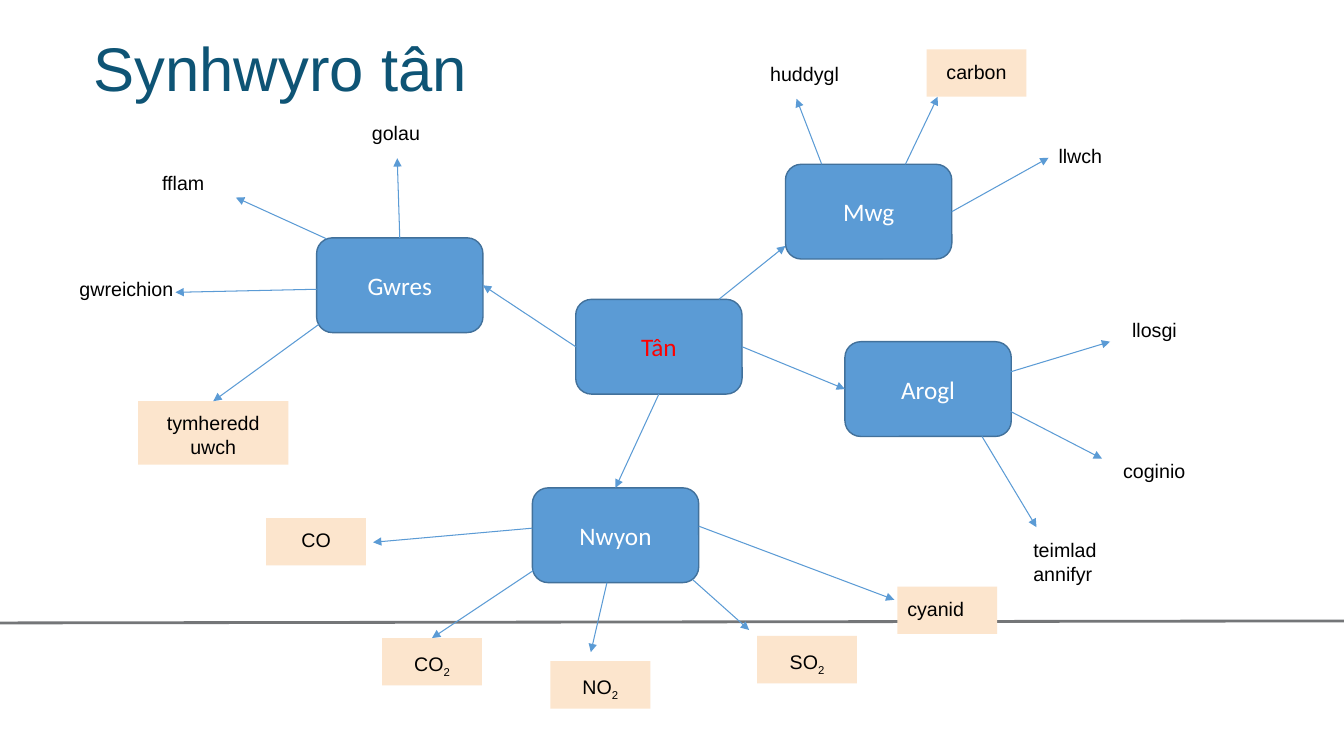
from lxml import etree
from pptx import Presentation
from pptx.dml.color import RGBColor
from pptx.enum.shapes import MSO_CONNECTOR, MSO_SHAPE
from pptx.enum.text import MSO_ANCHOR, PP_ALIGN
from pptx.oxml.ns import qn
from pptx.util import Inches, Pt

STRAIGHT = MSO_CONNECTOR.STRAIGHT
RECT, ROUND = MSO_SHAPE.RECTANGLE, MSO_SHAPE.ROUNDED_RECTANGLE
TOP_ANCHOR, MIDDLE = MSO_ANCHOR.TOP, MSO_ANCHOR.MIDDLE
LEFT_ALIGN, CENTER = PP_ALIGN.LEFT, PP_ALIGN.CENTER
TOP, LEFT, BOTTOM, RIGHT = range(4)

TEAL = RGBColor(0x0E, 0x54, 0x75)
BLUE = RGBColor(0x5B, 0x9B, 0xD5)
NAVY = RGBColor(0x42, 0x71, 0x9B)
PEACH = RGBColor(0xFC, 0xE5, 0xCD)
GREY = RGBColor(0x74, 0x76, 0x78)
RED = RGBColor(0xFF, 0, 0)
BLACK = RGBColor(0, 0, 0)
WHITE = RGBColor(0xFF, 0xFF, 0xFF)

TITLE = "Synhwyro tân"
HUB_SIZE = (1.65, 0.94)
LABEL_SIZE = (0.99, 0.47)

# name: left, top, text colour
HUBS = {
    "Tân": (5.71, 2.97, RED),
    "Arogl": (8.38, 3.39, WHITE),
    "Mwg": (7.79, 1.63, WHITE),
    "Gwres": (3.14, 2.36, WHITE),
    "Nwyon": (5.28, 4.84, WHITE),
}
# text: left, top
PLAIN = {
    "huddygl": (7.54, 0.51),
    "llwch": (10.4, 1.33),
    "llosgi": (11.13, 3.05),
    "coginio": (11.04, 4.45),
    "teimlad annifyr": (10.15, 5.24),
    "golau": (3.59, 1.1),
    "fflam": (1.51, 1.6),
    "gwreichion": (0.69, 2.65),
}
# text: left, top, alignment
TINTED = {
    "carbon": (9.19, 0.49, CENTER),
    "tymheredd uwch": (1.37, 3.98, CENTER),
    "CO": (2.64, 5.14, CENTER),
    "CO2": (3.79, 6.33, CENTER),
    "NO2": (5.46, 6.56, CENTER),
    "SO2": (7.51, 6.31, CENTER),
    "cyanid": (8.9, 5.82, LEFT_ALIGN),
}
WIDE = {"gwreichion": (1.24, 0.47), "tymheredd uwch": (1.49, 0.63)}

# each end is a point, or a box name with one of its sides
ARROWS = [
    (("Tân", RIGHT), ("Arogl", LEFT)),
    (("Tân", BOTTOM), ("Nwyon", TOP)),
    (("Tân", LEFT), ("Gwres", RIGHT)),
    ((7.13, 2.97), (7.79, 2.44)),
    ((8.15, 1.63), (7.9, 0.98)),
    ((8.98, 1.63), (9.3, 0.96)),
    (("Mwg", RIGHT), ("llwch", LEFT)),
    ((10.02, 3.69), (11.01, 3.39)),
    ((10.02, 4.08), (10.93, 4.55)),
    ((9.74, 4.33), (10.28, 5.23)),
    (("Gwres", TOP), (3.94, 1.57)),
    ((3.24, 2.37), (2.34, 1.96)),
    ((3.14, 2.87), (1.74, 2.9)),
    ((3.16, 3.22), ("tymheredd uwch", TOP)),
    ((5.28, 5.24), (3.7, 5.38)),
    ((5.29, 5.66), ("CO2", TOP)),
    ((6.02, 5.78), (5.86, 6.47)),
    ((6.87, 5.75), (7.43, 6.25)),
    ((6.93, 5.22), (8.87, 5.95)),
]

HUB_FONT = {"name": "Calibri", "size": Pt(18)}
LABEL_FONT = {"name": "Arial", "size": Pt(14)}
TITLE_FONT = {"name": "Arial", "size": Pt(44)}

prs = Presentation()
prs.slide_width, prs.slide_height = Inches(13.33), Inches(7.5)
slide = prs.slides.add_slide(prs.slide_layouts[6])
shapes = slide.shapes
boxes = {}


def write(shape, text, font, color, align, anchor, pad):
    """Fill a shape with one paragraph, lowering a final digit."""
    frame = shape.text_frame
    frame.word_wrap = True
    frame.vertical_anchor = anchor
    frame.margin_left = frame.margin_right = Inches(0.1)
    frame.margin_top = frame.margin_bottom = Inches(pad)
    para = frame.paragraphs[0]
    para.alignment = align
    stem = text.rstrip("2")
    for part in filter(None, (stem, text[len(stem):])):
        run = para.add_run()
        run.text = part
        for key, value in font.items():
            setattr(run.font, key, value)
        run.font.color.rgb = color
        if part == "2":
            run.font._element.set("baseline", "-25000")
            para.line_spacing = 1.15
    return para


def add_box(kind, left, top, size, fill):
    box = shapes.add_shape(kind, *map(Inches, (left, top, *size)))
    box.shadow.inherit = False
    box.fill.solid()
    box.fill.fore_color.rgb = fill
    box.line.fill.background()
    return box


def add_line(start, end, color, width):
    line = shapes.add_connector(STRAIGHT, *map(Inches, (*start, *end)))
    line.line.color.rgb = color
    line.line.width = Pt(width)
    etree.SubElement(line._element.spPr, qn("a:effectLst"))
    return line


def add_arrow(start, end):
    joined = [isinstance(tip[0], str) for tip in (start, end)]
    points = [(0, 0) if join else tip for join, tip in zip(joined, (start, end))]
    line = add_line(*points, BLUE, 0.75)
    if joined[0]:
        line.begin_connect(boxes[start[0]], start[1])
    if joined[1]:
        line.end_connect(boxes[end[0]], end[1])
    etree.SubElement(line.line._get_or_add_ln(), qn("a:tailEnd"), type="triangle")


add_line((0, 6.18), (13.33, 6.16), GREY, 2)
title = shapes.add_textbox(*map(Inches, (0.83, -0.02, 11.5, 1.45)))
write(title, TITLE, TITLE_FONT, TEAL, LEFT_ALIGN, MIDDLE, 0.05).line_spacing = 0.9

for name, (left, top, color) in HUBS.items():
    hub = boxes[name] = add_box(ROUND, left, top, HUB_SIZE, BLUE)
    hub.line.color.rgb = NAVY
    hub.line.width = Pt(1)
    write(hub, name, HUB_FONT, color, CENTER, MIDDLE, 0.05)

for name, (left, top) in PLAIN.items():
    size = WIDE.get(name, LABEL_SIZE)
    note = boxes[name] = shapes.add_textbox(*map(Inches, (left, top, *size)))
    write(note, name, LABEL_FONT, BLACK, LEFT_ALIGN, TOP_ANCHOR, 0.1)

for name, (left, top, align) in TINTED.items():
    tag = boxes[name] = add_box(RECT, left, top, WIDE.get(name, LABEL_SIZE), PEACH)
    write(tag, name, LABEL_FONT, BLACK, align, TOP_ANCHOR, 0.1)

for start, end in ARROWS:
    add_arrow(start, end)

prs.save("out.pptx")
